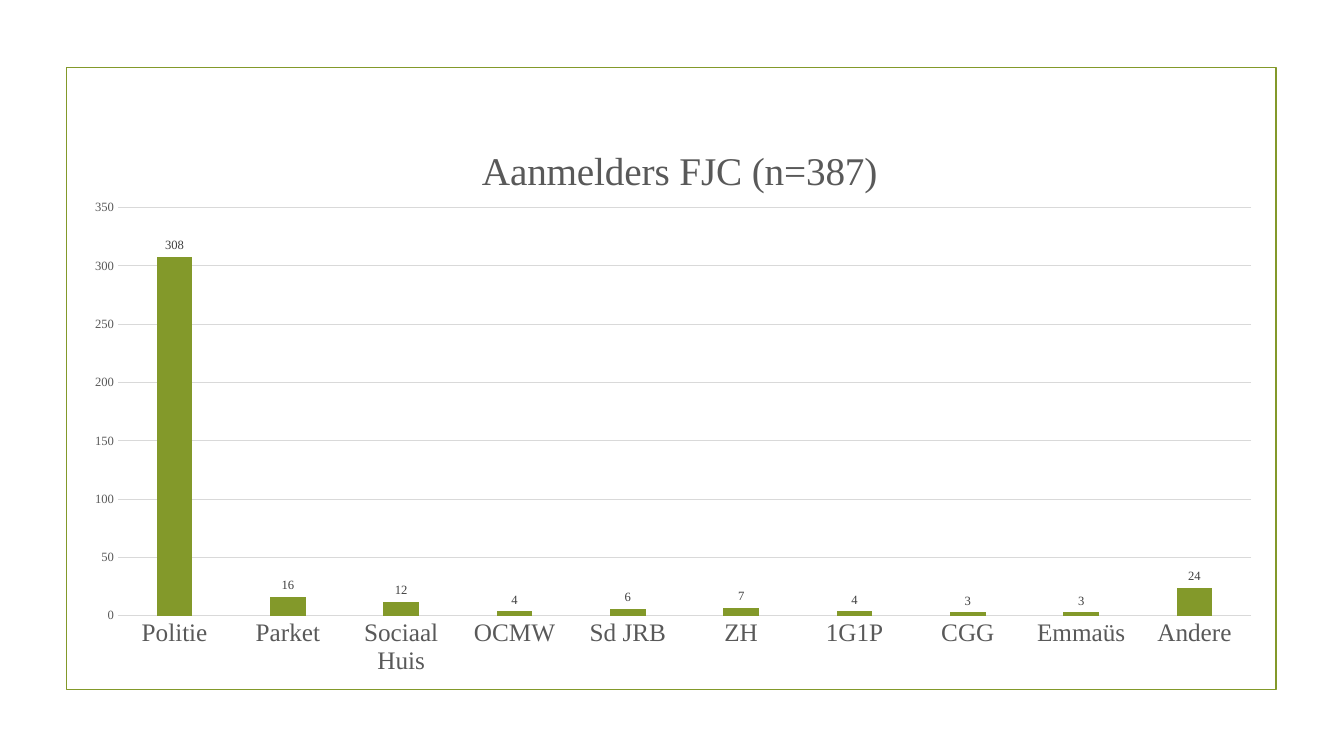
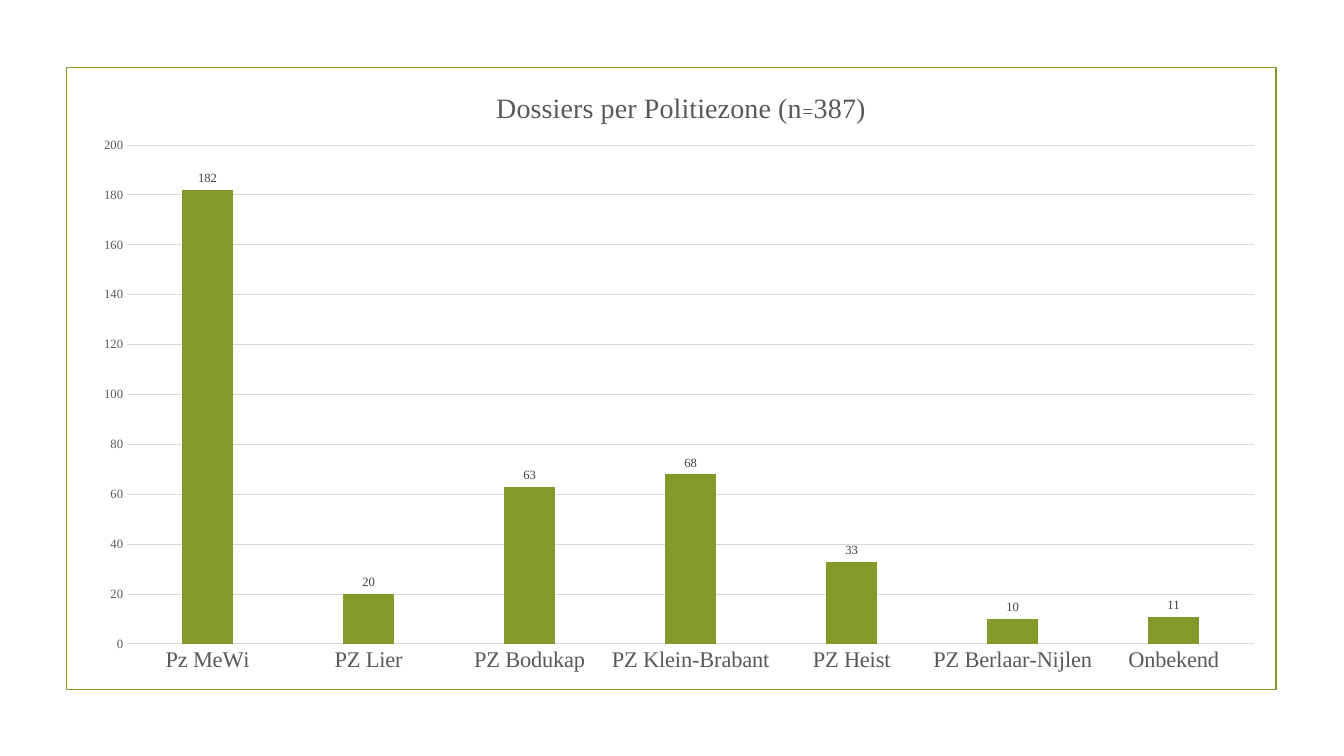
from dataclasses import dataclass

from lxml.etree import SubElement
from pptx import Presentation
from pptx.chart.axis import CategoryAxis, ValueAxis
from pptx.chart.chart import Chart
from pptx.chart.data import CategoryChartData
from pptx.dml.color import RGBColor
from pptx.dml.line import LineFormat
from pptx.enum.chart import XL_CHART_TYPE, XL_LABEL_POSITION, XL_TICK_MARK
from pptx.enum.shapes import MSO_SHAPE
from pptx.oxml.ns import qn
from pptx.slide import Slide
from pptx.text.text import Font
from pptx.util import Inches, Pt

GREEN = RGBColor(0x83, 0x99, 0x2A)
GREY = RGBColor(0x59, 0x59, 0x59)
DARK = RGBColor(0x40, 0x40, 0x40)
PALE = RGBColor(0xD9, 0xD9, 0xD9)
BLACK = RGBColor(0, 0, 0)
FACE = "Times New Roman"


@dataclass(frozen=True)
class Box:
    left: float
    top: float
    width: float = 0
    height: float = 0


@dataclass(frozen=True)
class Graph:
    title: list[tuple[str, int]]
    place: Box
    head: Box
    plot: Box
    size: int
    top: int
    step: int
    data: dict[str, int]


FRAME = Box(0.66, 0.67, 12, 6.17)
GRAPHS = [
    Graph(
        [("Aanmelders FJC (n=387)", 28)],
        Box(0.71, 1.18, 11.94, 5.62),
        Box(4.71, 1.38),
        Box(1.17, 2.06, 11.24, 4.05),
        18, 350, 50,
        {
            "Politie": 308, "Parket": 16, "Sociaal Huis": 12, "OCMW": 4,
            "Sd JRB": 6, "ZH": 7, "1G1P": 4, "CGG": 3, "Emmaüs": 3,
            "Andere": 24,
        },
    ),
    Graph(
        [("Dossiers per Politiezone (n", 20), ("=", 14), ("387)", 20)],
        Box(0.79, 0.66, 11.89, 6.15),
        Box(4.89, 0.88),
        Box(1.26, 1.44, 11.18, 4.95),
        16, 200, 20,
        {
            "Pz MeWi": 182, "PZ Lier": 20, "PZ Bodukap": 63,
            "PZ Klein-Brabant": 68, "PZ Heist": 33,
            "PZ Berlaar-Nijlen": 10, "Onbekend": 11,
        },
    ),
]


def set_font(font: Font, size: int, color: RGBColor) -> None:
    font.name = FACE
    font.size = Pt(size)
    font.bold = False
    font.color.rgb = color


def set_line(line: LineFormat, color: RGBColor, width: float) -> None:
    line.color.rgb = color
    line.width = Pt(width)


def set_axis(axis: CategoryAxis | ValueAxis, size: int) -> None:
    axis.major_tick_mark = XL_TICK_MARK.NONE
    axis.minor_tick_mark = XL_TICK_MARK.NONE
    set_font(axis.tick_labels.font, size, GREY)


def set_place(chart: Chart, tag: str, place: Box, part: Box) -> None:
    owner = chart.element.find(".//" + qn(tag))
    old = owner.find(qn("c:layout"))
    if old is not None:
        owner.remove(old)
    layout = SubElement(owner, qn("c:layout"))
    text = owner.find(qn("c:tx"))
    owner.insert(0 if text is None else 1, layout)
    manual = SubElement(layout, qn("c:manualLayout"))
    rules = {"xMode": "edge", "yMode": "edge"}
    if part.width:
        rules = {"layoutTarget": "inner"} | rules
    rules["x"] = (part.left - place.left) / place.width
    rules["y"] = (part.top - place.top) / place.height
    if part.width:
        rules["w"] = part.width / place.width
        rules["h"] = part.height / place.height
    for name, value in rules.items():
        SubElement(manual, qn("c:" + name)).set("val", str(value))


def add_frame(slide: Slide, box: Box) -> None:
    frame = slide.shapes.add_shape(
        MSO_SHAPE.RECTANGLE, Inches(box.left), Inches(box.top),
        Inches(box.width), Inches(box.height),
    )
    frame.shadow.inherit = False
    frame.fill.background()
    set_line(frame.line, GREEN, 1.25)


def add_graph(slide: Slide, graph: Graph) -> None:
    data = CategoryChartData()
    data.categories = list(graph.data)
    data.add_series("Series 1", list(graph.data.values()))
    box = graph.place
    chart = slide.shapes.add_chart(
        XL_CHART_TYPE.COLUMN_CLUSTERED, Inches(box.left), Inches(box.top),
        Inches(box.width), Inches(box.height), data,
    ).chart
    set_font(chart.font, 10, BLACK)
    chart.has_legend = False

    chart.has_title = True
    line = chart.chart_title.text_frame.paragraphs[0]
    for text, size in graph.title:
        run = line.add_run()
        run.text = text
        set_font(run.font, size, GREY)

    set_axis(chart.category_axis, graph.size)
    set_line(chart.category_axis.format.line, PALE, 0.75)
    scale = chart.value_axis
    set_axis(scale, 9)
    scale.format.line.fill.background()
    scale.minimum_scale = 0
    scale.maximum_scale = graph.top
    scale.major_unit = graph.step
    set_line(scale.major_gridlines.format.line, PALE, 0.75)

    plot = chart.plots[0]
    plot.vary_by_categories = False
    plot.gap_width = 219
    plot.overlap = -27
    fill = plot.series[0].format.fill
    fill.solid()
    fill.fore_color.rgb = GREEN
    plot.has_data_labels = True
    labels = plot.data_labels
    labels.show_value = True
    labels.position = XL_LABEL_POSITION.OUTSIDE_END
    set_font(labels.font, 9, DARK)

    set_place(chart, "c:title", box, graph.head)
    set_place(chart, "c:plotArea", box, graph.plot)


def main() -> None:
    deck = Presentation()
    deck.slide_width = Inches(13.33)
    deck.slide_height = Inches(7.5)
    for graph in GRAPHS:
        slide = deck.slides.add_slide(deck.slide_layouts[6])
        add_frame(slide, FRAME)
        add_graph(slide, graph)
    deck.save("out.pptx")


if __name__ == "__main__":
    main()
